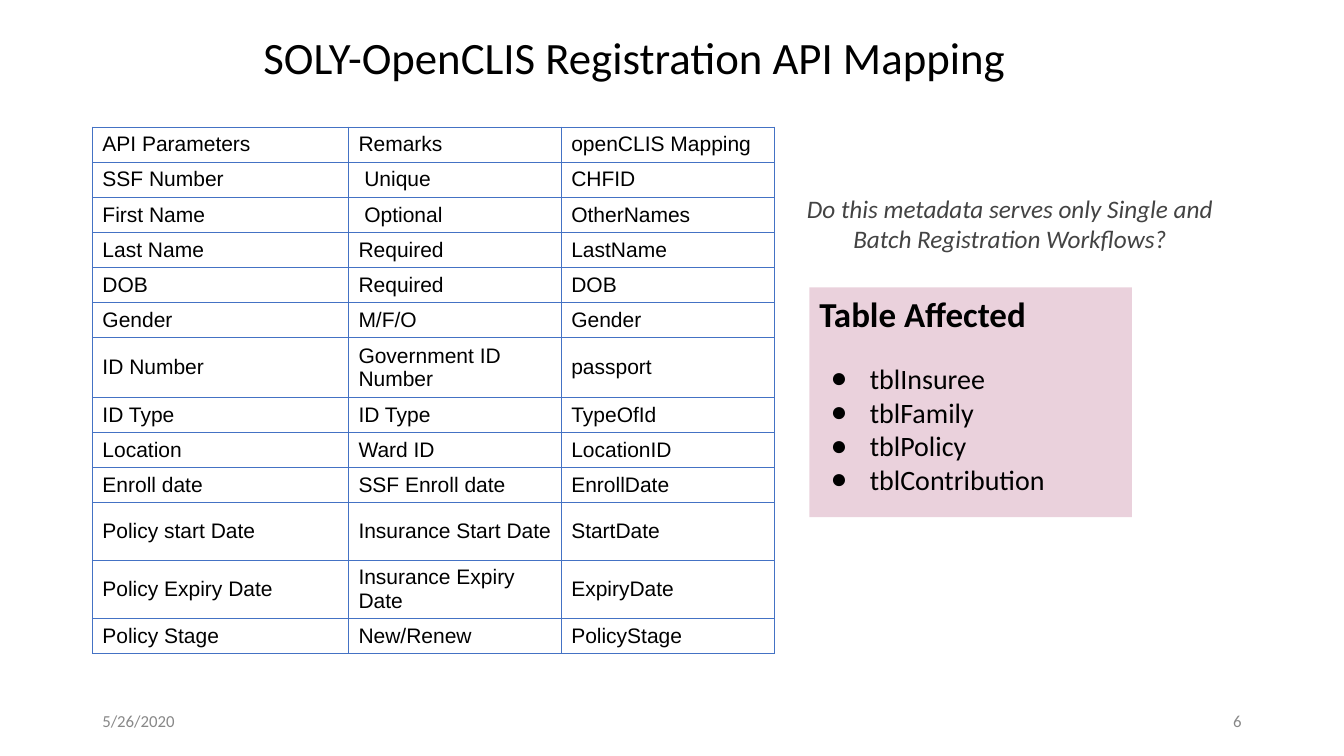
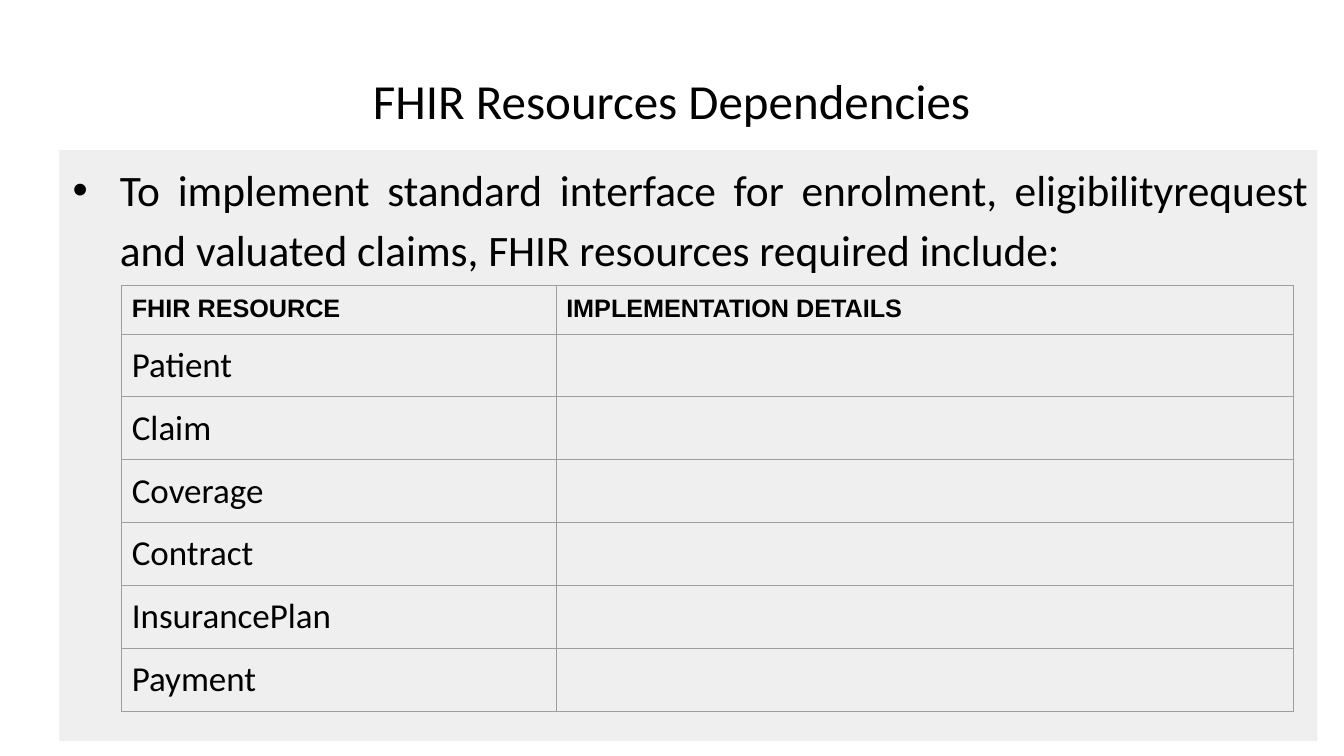
import lxml.etree
import pptx
import pptx.dml.color
import pptx.enum.shapes
import pptx.enum.text
import pptx.oxml.ns
import pptx.util

Pt = pptx.util.Pt
RGBColor = pptx.dml.color.RGBColor
ALIGN = pptx.enum.text.PP_ALIGN
ANCHOR = pptx.enum.text.MSO_ANCHOR
qn = pptx.oxml.ns.qn

BLACK = RGBColor(0x00, 0x00, 0x00)
FOOTER_GRAY = RGBColor(0x88, 0x88, 0x88)
QUESTION_GRAY = RGBColor(0x43, 0x43, 0x43)
PANEL_GRAY = RGBColor(0xEF, 0xEF, 0xEF)
PANEL_PINK = RGBColor(0xEA, 0xD1, 0xDC)
GRID_BLUE = RGBColor(0x44, 0x72, 0xC4)
GRID_GRAY = RGBColor(0x9E, 0x9E, 0x9E)

BODY_FONT = "Calibri"
TABLE_FONT = "Arial"
LEFT_MARGIN = 66
FOOTER_TOP = 500.4
FOOTER_WIDTH = 216
TITLE_ONLY, TITLE_AND_CONTENT = 5, 1

MAPPING_ROWS = [
    ("API Parameters", "Remarks", "openCLIS Mapping"),
    ("SSF Number", " Unique", "CHFID"),
    ("First Name", " Optional", "OtherNames"),
    ("Last Name", "Required", "LastName"),
    ("DOB", "Required", "DOB"),
    ("Gender", "M/F/O", "Gender"),
    ("ID Number", "Government ID Number", "passport"),
    ("ID Type", "ID Type", "TypeOfId"),
    ("Location", "Ward ID", "LocationID"),
    ("Enroll date", "SSF Enroll date", "EnrollDate"),
    ("Policy start Date", "Insurance Start Date", "StartDate"),
    ("Policy Expiry Date", "Insurance Expiry Date", "ExpiryDate"),
    ("Policy Stage", "New/Renew", "PolicyStage"),
]
TALL_MAPPING_ROWS = {6: 42.5, 10: 41.3, 11: 41.3}
AFFECTED_TABLES = ["tblInsuree", "tblFamily", "tblPolicy", "tblContribution"]
RESOURCES = ["Patient", "Claim", "Coverage", "Contract", "InsurancePlan", "Payment"]


def place(shape, left, top, width, height):
    shape.left, shape.top = Pt(left), Pt(top)
    shape.width, shape.height = Pt(width), Pt(height)


def format_paragraph(paragraph, size, color=BLACK, name=BODY_FONT, bold=False,
                     italic=False, align=ALIGN.LEFT, line_spacing=1.0):
    paragraph.alignment = align
    paragraph.line_spacing = line_spacing
    paragraph.space_before = Pt(0)
    font = paragraph.font
    font.size, font.name, font.bold, font.italic = Pt(size), name, bold, italic
    font.color.rgb = color


def set_bullet(paragraph, character, hanging):
    properties = paragraph._p.get_or_add_pPr()
    properties.set("marL", str(Pt(36)))
    properties.set("indent", str(-Pt(hanging)))
    color = lxml.etree.SubElement(properties, qn("a:buClr"))
    lxml.etree.SubElement(color, qn("a:srgbClr"), val=str(BLACK))
    lxml.etree.SubElement(properties, qn("a:buFont"), typeface=TABLE_FONT)
    lxml.etree.SubElement(properties, qn("a:buChar"), char=character)


def set_borders(cell, color):
    properties = cell._tc.get_or_add_tcPr()
    for position, side in enumerate(("a:lnL", "a:lnR", "a:lnT", "a:lnB")):
        line = lxml.etree.Element(qn(side), w=str(Pt(0.75)))
        fill = lxml.etree.SubElement(line, qn("a:solidFill"))
        lxml.etree.SubElement(fill, qn("a:srgbClr"), val=str(color))
        properties.insert(position, line)


def set_title(slide, text, box, size, line_spacing):
    title = slide.shapes.title
    place(title, *box)
    frame = title.text_frame
    frame.text = text
    frame.auto_size = pptx.enum.text.MSO_AUTO_SIZE.NONE
    frame.vertical_anchor = ANCHOR.MIDDLE
    format_paragraph(frame.paragraphs[0], size, align=ALIGN.CENTER,
                     line_spacing=line_spacing)


def add_label(slide, text, box, size, color, **style):
    frame = slide.shapes.add_textbox(*map(Pt, box)).text_frame
    frame.word_wrap = True
    frame.vertical_anchor = ANCHOR.MIDDLE
    frame.text = text
    format_paragraph(frame.paragraphs[0], size, color, **style)


def add_footer(slide, date, number):
    right_left = LEFT_MARGIN + 612
    for text, left, align in ((date, LEFT_MARGIN, ALIGN.LEFT),
                              (number, right_left, ALIGN.RIGHT)):
        add_label(slide, text, (left, FOOTER_TOP, FOOTER_WIDTH, 28.8), 12,
                  FOOTER_GRAY, align=align)


def add_grid(slide, rows, left, top, column_widths, row_heights, border, padding):
    frame = slide.shapes.add_table(
        len(rows), len(column_widths), Pt(left), Pt(top),
        Pt(sum(column_widths)), Pt(sum(row_heights)))
    table = frame.table
    table.first_row = table.horz_banding = False
    for column, width in zip(table.columns, column_widths):
        column.width = Pt(width)
    for row, height, texts in zip(table.rows, row_heights, rows):
        row.height = Pt(height)
        for cell, text in zip(row.cells, texts):
            cell.text = text
            cell.vertical_anchor = ANCHOR.MIDDLE
            cell.margin_top = cell.margin_bottom = Pt(padding)
            cell.fill.background()
            set_borders(cell, border)
    return table


def add_affected_panel(slide):
    panel = slide.shapes.add_shape(
        pptx.enum.shapes.MSO_SHAPE.RECTANGLE, Pt(578.2), Pt(205.2), Pt(230.4), Pt(164.2))
    panel.shadow.inherit = False
    panel.fill.solid()
    panel.fill.fore_color.rgb = PANEL_PINK
    panel.line.fill.background()
    frame = panel.text_frame
    frame.vertical_anchor = ANCHOR.TOP
    heading = frame.paragraphs[0]
    heading.text = "Table Affected"
    format_paragraph(heading, 25, bold=True)
    heading.space_after = Pt(19.5)
    for name in AFFECTED_TABLES:
        paragraph = frame.add_paragraph()
        paragraph.text = name
        set_bullet(paragraph, "●", 28)
        format_paragraph(paragraph, 20)


def set_resource_body(slide):
    body = slide.placeholders[1]
    place(body, 42.5, 107.3, 898.6, 421.9)
    body.fill.solid()
    body.fill.fore_color.rgb = PANEL_GRAY
    frame = body.text_frame
    frame.auto_size = pptx.enum.text.MSO_AUTO_SIZE.NONE
    frame.text = ("To implement standard interface for enrolment, eligibilityrequest "
                  "and valuated claims, FHIR resources required include:")
    paragraph = frame.paragraphs[0]
    set_bullet(paragraph, "•", 33.8)
    format_paragraph(paragraph, 31, align=ALIGN.JUSTIFY, line_spacing=1.15)


def build_mapping_slide(presentation):
    slide = presentation.slides.add_slide(presentation.slide_layouts[TITLE_ONLY])
    set_title(slide, "SOLY-OpenCLIS Registration API Mapping",
              (16.6, 11.5, 873.4, 62.6), 32, 0.9)
    heights = [TALL_MAPPING_ROWS.get(index, 25.1) for index in range(len(MAPPING_ROWS))]
    table = add_grid(slide, MAPPING_ROWS, LEFT_MARGIN, 90.7, (182.9, 152, 152),
                     heights, GRID_BLUE, 3.6)
    for cell in table.iter_cells():
        format_paragraph(cell.text_frame.paragraphs[0], 15, name=TABLE_FONT)
    add_label(slide, "Do this metadata serves only Single and Batch Registration Workflows?",
              (559.4, 133.9, 324, 51.8), 18, QUESTION_GRAY, italic=True,
              align=ALIGN.CENTER)
    add_affected_panel(slide)
    add_footer(slide, "5/26/2020", "6")


def build_resources_slide(presentation):
    slide = presentation.slides.add_slide(presentation.slide_layouts[TITLE_AND_CONTENT])
    set_title(slide, "FHIR Resources Dependencies", (LEFT_MARGIN, 43.9, 828, 48.2), 35, 1.15)
    set_resource_body(slide)
    rows = [("FHIR RESOURCE", "IMPLEMENTATION DETAILS")]
    rows += [(resource, "") for resource in RESOURCES]
    heights = [35] + [44.8] * len(RESOURCES)
    table = add_grid(slide, rows, 87, 203.6, (310.3, 526.3), heights, GRID_GRAY, 7.2)
    for cell in table.rows[0].cells:
        cell.vertical_anchor = ANCHOR.TOP
        format_paragraph(cell.text_frame.paragraphs[0], 18, name=TABLE_FONT, bold=True)
    for index in range(1, len(rows)):
        cell = table.cell(index, 0)
        cell.fill.solid()
        cell.fill.fore_color.rgb = PANEL_GRAY
        format_paragraph(cell.text_frame.paragraphs[0], 25)


def main():
    presentation = pptx.Presentation()
    presentation.slide_width, presentation.slide_height = Pt(960), Pt(540)
    build_mapping_slide(presentation)
    build_resources_slide(presentation)
    presentation.save("out.pptx")


if __name__ == "__main__":
    main()
